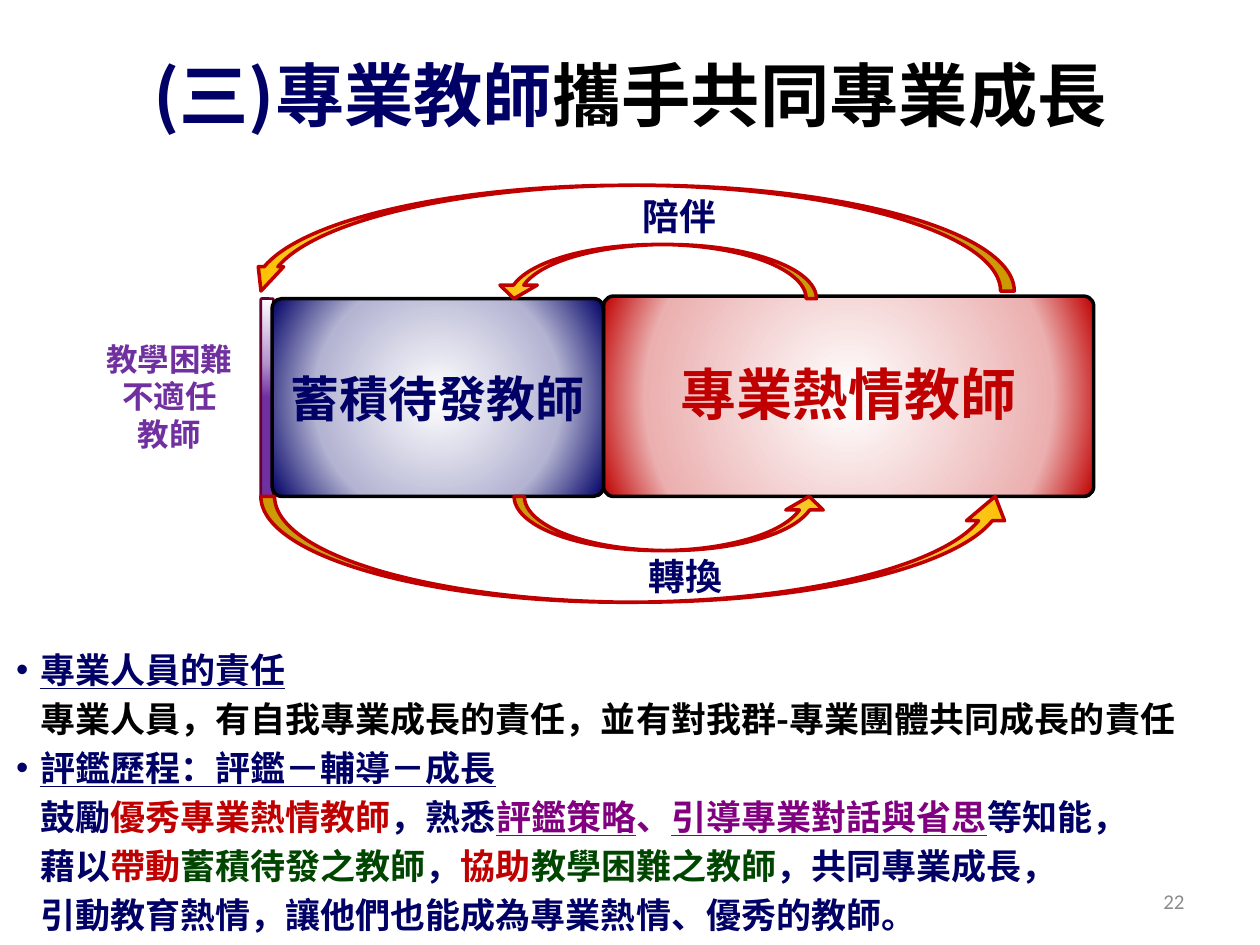
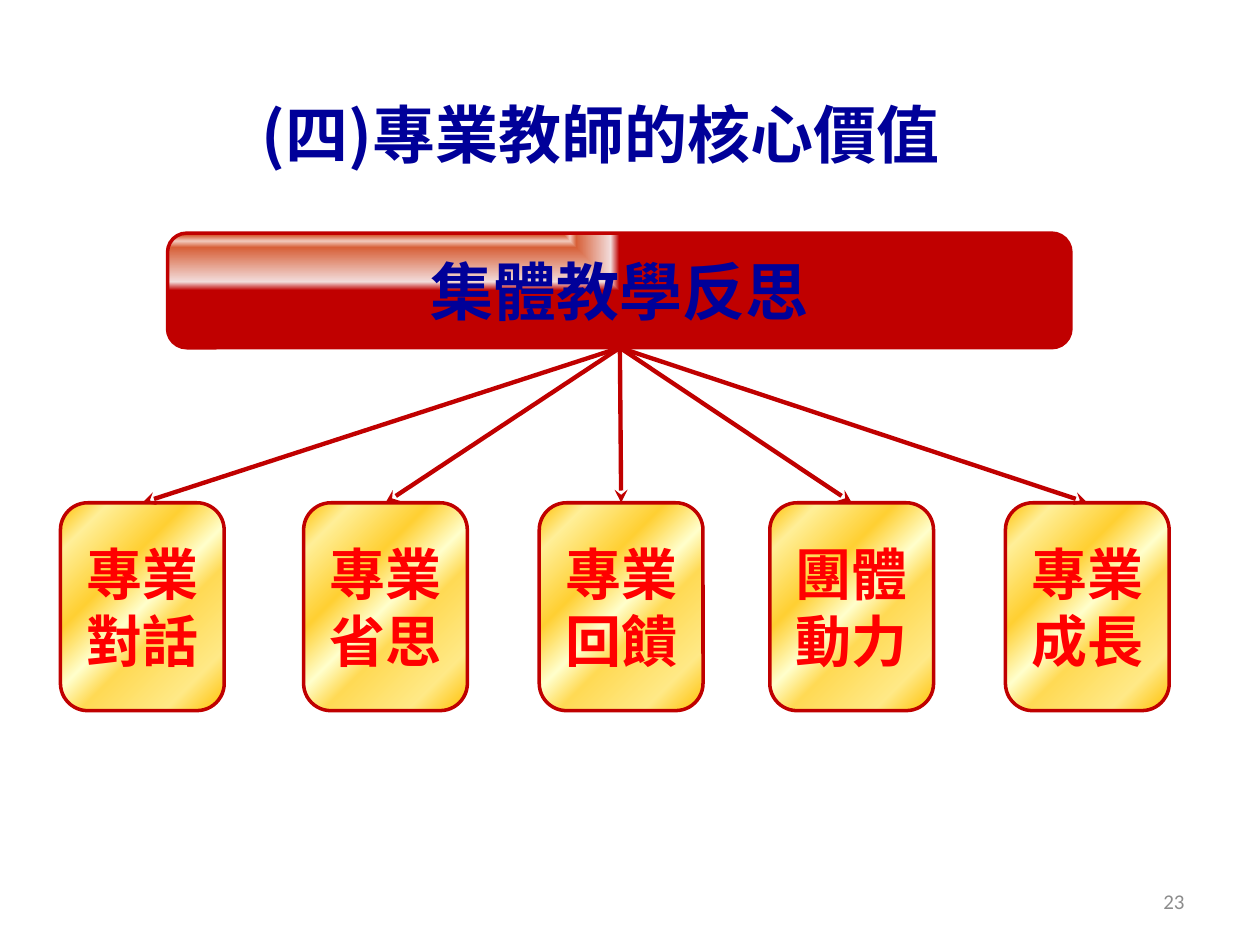
from lxml import etree
from pptx import Presentation
from pptx import util as u
from pptx.dml.color import RGBColor
from pptx.enum import shapes, text
from pptx.oxml.ns import qn

PX = 9144  # EMU per px, 100 px to the inch
TITLE_ONLY = 5

CJK_FONT = "Noto Sans CJK SC"
NUMBER_FONT = "Calibri"

BLACK = RGBColor(0x00, 0x00, 0x00)
WHITE = RGBColor(0xFF, 0xFF, 0xFF)
NAVY = RGBColor(0x00, 0x00, 0x66)
BLUE = RGBColor(0x00, 0x00, 0x99)
CRIMSON = RGBColor(0xC0, 0x00, 0x00)
RED = RGBColor(0xFF, 0x00, 0x00)
VIOLET = RGBColor(0x70, 0x30, 0xA0)
PURPLE = RGBColor(0x80, 0x00, 0x80)
GREEN = RGBColor(0x00, 0x46, 0x00)
MAROON = RGBColor(0x66, 0x00, 0x33)
GREY = RGBColor(0x8C, 0x8C, 0x8C)
GOLD = RGBColor(0xFF, 0xC0, 0x00)
ICE = RGBColor(0xDB, 0xEE, 0xF4)

CENTRED = (50, 50, 50, 50)
DOWNWARD = (50, -80, 50, 180)
FROM_CORNER = (0, 0, 100, 100)

RED_GLOW = [(0, WHITE), (77, RGBColor(0xEB, 0xAF, 0xAF)), (100, CRIMSON)]
NAVY_GLOW = [(0, WHITE), (64, RGBColor(0xB3, 0xB3, 0xD2)), (100, NAVY)]
VIOLET_FADE = [(0, WHITE), (65, RGBColor(0xB4, 0x93, 0xCD)), (100, VIOLET)]
ARROW_FADE = [(0, ICE), (100, GOLD)]
GOLD_SHEEN = [
    (0, GOLD), (16, RGBColor(0xFF, 0xE9, 0x86)), (39, RGBColor(0xFF, 0xDA, 0x55)),
    (50, RGBColor(0xFF, 0xFF, 0xCC)), (66, RGBColor(0xFF, 0xD0, 0x33)),
    (87, RGBColor(0xFF, 0xEF, 0x98)), (100, GOLD),
]
RED_GLOSS = [
    (0, RGBColor(0xCC, 0x33, 0x00)), (14, RGBColor(0xF2, 0xCA, 0xBD)),
    (25, RGBColor(0xD7, 0x60, 0x38)), (85, RGBColor(0xF2, 0xDC, 0xDB)), (100, CRIMSON),
]


def px(*lengths):
    return [length * PX for length in lengths]


def sub(parent, tag, **attributes):
    child = etree.SubElement(parent, qn(tag))
    for key, value in attributes.items():
        child.set(key, str(value))
    return child


def add_runs(paragraph, runs, size, font=CJK_FONT, bold=True):
    """Each run is (words, colour) or (words, colour, underlined); \\n breaks the line."""
    for words, colour, *underlined in runs:
        for i, line in enumerate(words.split("\n")):
            if i:
                paragraph.add_line_break()
            if not line:
                continue
            run = paragraph.add_run()
            run.text = line
            run.font.size = u.Pt(size)
            run.font.bold = bold
            run.font.name = font
            run.font.color.rgb = colour
            run.font.underline = bool(underlined)
            sub(run.font._element, "a:ea", typeface=font)


def format_frame(frame, inset=10):
    frame.word_wrap = True
    frame.auto_size = text.MSO_AUTO_SIZE.NONE
    frame.vertical_anchor = text.MSO_ANCHOR.MIDDLE
    frame.margin_left = frame.margin_right = inset * PX
    frame.margin_top = frame.margin_bottom = inset * PX // 2


def write_line(frame, runs, size, align=text.PP_ALIGN.CENTER, spacing=None, **style):
    paragraph = frame.paragraphs[0]
    paragraph.alignment = align
    if spacing:
        paragraph.line_spacing = u.Pt(spacing)
    add_runs(paragraph, runs, size, **style)


def set_title(slide, box, runs, size):
    title = slide.shapes.title
    title.left, title.top, title.width, title.height = px(*box)
    format_frame(title.text_frame)
    write_line(title.text_frame, runs, size)


def add_label(slide, box, runs, size, **style):
    frame = slide.shapes.add_textbox(*px(*box)).text_frame
    format_frame(frame)
    write_line(frame, runs, size, **style)


def add_page_number(slide, number):
    add_label(slide, (717, 695, 233, 40), [(number, GREY)], 12,
              align=text.PP_ALIGN.RIGHT, font=NUMBER_FONT, bold=False)


def fill_gradient(shape, stops, focus=None, kind="circle", angle=0):
    """Radiate from the focus rectangle (l, t, r, b in percent), or run along the angle."""
    shape.fill.gradient()
    gradient = shape._element.spPr.find(qn("a:gradFill"))
    for child in list(gradient):
        gradient.remove(child)
    gradient.set("rotWithShape", "1")
    stop_list = sub(gradient, "a:gsLst")
    for position, colour in stops:
        stop = sub(stop_list, "a:gs", pos=position * 1000)
        sub(stop, "a:srgbClr", val=colour)
    if focus:
        shade = sub(gradient, "a:path", path=kind)
        edges = {edge: value * 1000 for edge, value in zip("ltrb", focus)}
        sub(shade, "a:fillToRect", **edges)
    else:
        sub(gradient, "a:lin", ang=angle * 60000, scaled=1)


def add_block(slide, box, stops, outline=CRIMSON, width=2, adjust=(),
              preset=shapes.MSO_SHAPE.ROUNDED_RECTANGLE, **gradient):
    block = slide.shapes.add_shape(preset, *px(*box))
    block.shadow.inherit = False
    for i, value in enumerate(adjust):
        block.adjustments[i] = value
    fill_gradient(block, stops, **gradient)
    block.line.color.rgb = outline
    block.line.width = u.Pt(width)
    format_frame(block.text_frame, inset=0)
    return block


def add_curved_arrow(slide, box, adjust, rotation=0):
    arrow = add_block(slide, box, ARROW_FADE, adjust=adjust, focus=DOWNWARD,
                      preset=shapes.MSO_SHAPE.CURVED_UP_ARROW)
    arrow.rotation = rotation


def add_arrow(slide, start, end):
    arrow = slide.shapes.add_connector(shapes.MSO_CONNECTOR.STRAIGHT, *px(*start, *end))
    arrow.line.color.rgb = CRIMSON
    arrow.line.width = u.Pt(2.5)
    sub(arrow.line._get_or_add_ln(), "a:tailEnd", type="stealth")
    sub(arrow._element.spPr, "a:effectLst")


def add_bullets(slide, box, items, size, spacing):
    frame = slide.shapes.add_textbox(*px(*box)).text_frame
    format_frame(frame)
    for i, runs in enumerate(items):
        paragraph = frame.add_paragraph() if i else frame.paragraphs[0]
        paragraph.line_spacing = u.Pt(spacing)
        properties = paragraph._p.get_or_add_pPr()
        properties.set("marL", str(19 * PX))
        properties.set("indent", str(-19 * PX))
        sub(properties, "a:buFont", typeface="Arial")
        sub(properties, "a:buChar", char="•")
        add_runs(paragraph, runs, size)


def build_growth_slide(slide):
    set_title(slide, (0, 41, 1000, 67),
              [("(三)專業教師", NAVY), ("攜手共同專業成長", BLACK)], 39.6)

    add_label(slide, (28, 235, 213, 159), [("教學困難\n不適任\n教師", VIOLET)], 18)
    passionate = add_block(slide, (479, 235, 389, 159), RED_GLOW, BLACK,
                           adjust=[0.05], focus=CENTRED)
    write_line(passionate.text_frame, [("專業熱情教師", CRIMSON)], 32, spacing=34.5)
    add_block(slide, (207, 237, 10, 157), VIOLET_FADE, MAROON, 1.5,
              adjust=[0.09], focus=DOWNWARD)
    emerging = add_block(slide, (216, 237, 263, 157), NAVY_GLOW, BLACK,
                         adjust=[0.05], focus=CENTRED)
    write_line(emerging.text_frame, [("蓄積待發教師", NAVY)], 28, spacing=34.5)

    inner = (0.19, 0.69, 0.25)
    add_curved_arrow(slide, (408, 394, 249, 43), inner)
    add_curved_arrow(slide, (207, 394, 598, 84), (0.13, 0.36, 0.23))
    add_curved_arrow(slide, (393, 194, 255, 43), inner, rotation=180)
    add_curved_arrow(slide, (197, 147, 608, 84), (0.13, 0.24, 0.23), rotation=180)
    add_label(slide, (492, 156, 94, 36), [("陪伴", NAVY)], 21, spacing=21)
    add_label(slide, (497, 442, 94, 36), [("轉換", NAVY)], 21, spacing=21)

    duty = [
        ("專業人員的責任\n", NAVY, True),
        ("專業人員，有自我專業成長的責任，並有對我群-專業團體共同成長的責任", BLACK),
    ]
    process = [
        ("評鑑歷程：評鑑－輔導－成長\n", NAVY, True),
        ("鼓勵", NAVY), ("優秀專業熱情教師", CRIMSON), ("，熟悉", NAVY),
        ("評鑑策略", PURPLE, True), ("、", PURPLE), ("引導專業對話與省思", PURPLE, True),
        ("等知能，\n藉以", NAVY), ("帶動", CRIMSON), ("蓄積待發之教師", GREEN),
        ("，", NAVY), ("協助", CRIMSON), ("教學困難之教師", GREEN),
        ("，共同專業成長，\n引動教育熱情，讓他們也能成為專業熱情、優秀的教師。", NAVY),
    ]
    add_bullets(slide, (3, 501, 997, 249), [duty, process], 20, 28)
    add_page_number(slide, "22")


def build_values_slide(slide):
    set_title(slide, (118, 60, 717, 91), [("(四)專業教師的核心價值", BLUE)], 36)

    reflection = add_block(slide, (133, 185, 717, 91), RED_GLOSS,
                           focus=FROM_CORNER, kind="rect")
    write_line(reflection.text_frame, [("集體教學反思", BLUE)], 36)

    card_top, card_width, card_height = 399, 130, 165
    values = [(113, "專業\n對話"), (306, "專業\n省思"), (493, "專業\n回饋"),
              (676, "團體動力"), (863, "專業成長")]
    for centre, value in values:
        card = add_block(slide, (centre - card_width // 2, card_top, card_width, card_height),
                         GOLD_SHEEN, angle=225)
        write_line(card.text_frame, [(value, RED)], 32)
        add_arrow(slide, (492, 276), (centre, card_top))
    add_page_number(slide, "23")


def main():
    deck = Presentation()
    deck.slide_width, deck.slide_height = px(1000, 750)
    for build in (build_growth_slide, build_values_slide):
        build(deck.slides.add_slide(deck.slide_layouts[TITLE_ONLY]))
    deck.save("out.pptx")


if __name__ == "__main__":
    main()
